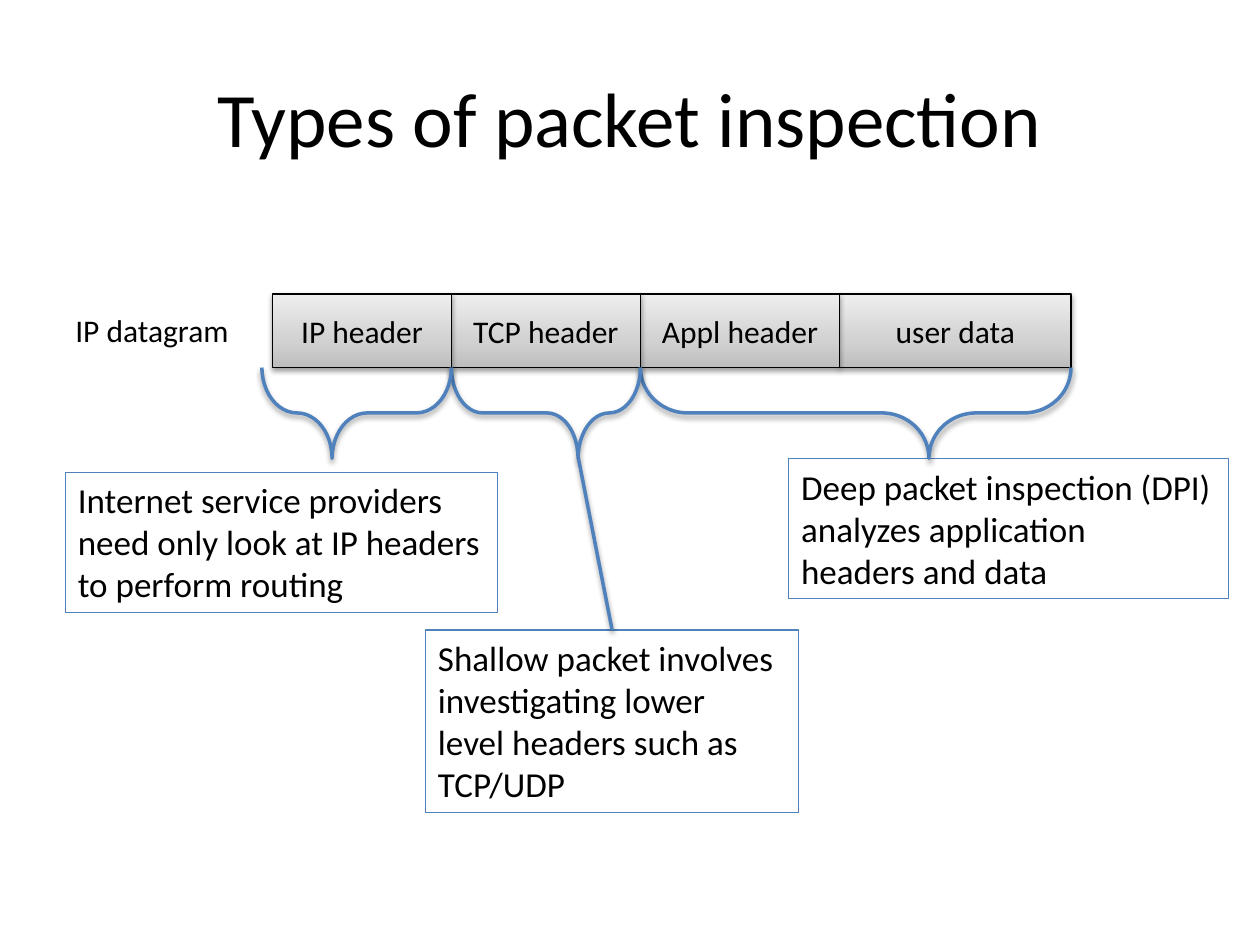
from itertools import pairwise

from lxml.etree import SubElement
from pptx import Presentation
from pptx.dml.color import RGBColor
from pptx.enum.shapes import MSO_CONNECTOR, MSO_SHAPE
from pptx.enum.text import MSO_ANCHOR, MSO_AUTO_SIZE, PP_ALIGN
from pptx.oxml.ns import qn
from pptx.util import Cm, Pt

COLORS = {
    "text": "000000",
    "field_line": "000000",
    "accent": "4F81BD",
    "shadow": "000000",
    "field_bottom": "BDBDBD",
    "field_middle": "D1D1D1",
    "field_top": "EEEEEE",
}
FIELD_STOPS = {0: "field_bottom", 35: "field_middle", 100: "field_top"}
FIELDS = ["IP header", "TCP header", "Appl header", "user data"]
FIELD_EDGES = [5.5, 9.1, 12.91, 16.93, 21.59]
FIELD_TOP, FIELD_HEIGHT = 5.93, 1.48
BRACE_TOP, BRACE_HEIGHT = 7.41, 1.83
BRACES = [(12.91, 21.59, 0.33), (9.1, 12.91, 0.33), (5.28, 9.1, 0.63)]
NOTES = [
    ((1.32, 9.53, 8.71, 2.82),
     ["Internet service providers", "need only look at IP headers", "to perform routing"]),
    ((8.58, 12.7, 7.52, 3.68),
     ["Shallow packet involves", "investigating lower", "level headers such as", "TCP/UDP"]),
    ((15.9, 9.25, 8.86, 2.82),
     ["Deep packet inspection (DPI)", "analyzes application", "headers and data"]),
]
CENTERED = {"word_wrap": True, "vertical_anchor": MSO_ANCHOR.MIDDLE}
FITTED = {
    "word_wrap": False,
    "vertical_anchor": MSO_ANCHOR.TOP,
    "auto_size": MSO_AUTO_SIZE.SHAPE_TO_FIT_TEXT,
}


def color(name):
    """Return the named colour."""
    return RGBColor.from_string(COLORS[name])


def apply_format(target, values):
    """Set each attribute in a dict of format values."""
    for name, value in values.items():
        setattr(target, name, value)


def write_text(shape, lines, size, frame_format, alignment=PP_ALIGN.LEFT):
    """Write one paragraph per line into a shape."""
    frame = shape.text_frame
    frame.text = "\n".join(lines)
    apply_format(frame, frame_format)
    for paragraph in frame.paragraphs:
        paragraph.alignment = alignment
        apply_format(paragraph.font, {"name": "Calibri", "size": Pt(size)})
        paragraph.font.color.rgb = color("text")


def set_line(shape, name, width):
    """Give a shape or connector a solid line."""
    shape.line.color.rgb = color(name)
    shape.line.width = Pt(width)


def add_color(parent, name):
    """Add a colour element to a parent element."""
    return SubElement(parent, qn("a:srgbClr"), val=COLORS[name])


def add_shadow(shape):
    """Add a soft shadow that falls downwards."""
    effects = SubElement(shape._element.spPr, qn("a:effectLst"))
    shadow = SubElement(effects, qn("a:outerShdw"), blurRad="40000", dist="20000",
                        dir="5400000", rotWithShape="0")
    SubElement(add_color(shadow, "shadow"), qn("a:alpha"), val="38000")


def fill_field(shape):
    """Fill a datagram field with a vertical grey gradient."""
    shape.fill.gradient()
    gradient = shape._element.spPr.find(qn("a:gradFill"))
    stops = gradient.find(qn("a:gsLst"))
    for stop in list(stops):
        stops.remove(stop)
    for position, name in FIELD_STOPS.items():
        add_color(SubElement(stops, qn("a:gs"), pos=str(position * 1000)), name)
    gradient.find(qn("a:lin")).set("ang", str(270 * 60000))


def add_label(slide, box, text, size, frame_format, alignment=PP_ALIGN.LEFT):
    """Add a plain text box."""
    label = slide.shapes.add_textbox(*map(Cm, box))
    write_text(label, [text], size, frame_format, alignment)


def add_field(slide, text, left, right):
    """Add one field of the datagram."""
    field = slide.shapes.add_shape(MSO_SHAPE.RECTANGLE, Cm(left), Cm(FIELD_TOP),
                                   Cm(right - left), Cm(FIELD_HEIGHT))
    fill_field(field)
    set_line(field, "field_line", 0.75)
    add_shadow(field)
    write_text(field, [text], 18, CENTERED, PP_ALIGN.CENTER)


def add_note(slide, box, lines):
    """Add an outlined explanation."""
    note = slide.shapes.add_shape(MSO_SHAPE.RECTANGLE, *map(Cm, box))
    note.fill.background()
    note.shadow.inherit = False
    set_line(note, "accent", 0.75)
    write_text(note, lines, 20, FITTED)


def add_brace(slide, left, right, tip):
    """Add a brace that opens upwards and spans left to right."""
    span = right - left
    brace = slide.shapes.add_shape(
        MSO_SHAPE.RIGHT_BRACE, Cm((left + right - BRACE_HEIGHT) / 2),
        Cm(BRACE_TOP + (BRACE_HEIGHT - span) / 2), Cm(BRACE_HEIGHT), Cm(span))
    brace.rotation = 90
    brace.adjustments[0] = 0.52
    brace.adjustments[1] = tip
    brace.fill.background()
    set_line(brace, "accent", 2)
    add_shadow(brace)


def add_pointer(slide, start, end):
    """Add a straight line from a brace to its note."""
    pointer = slide.shapes.add_connector(MSO_CONNECTOR.STRAIGHT, *map(Cm, start + end))
    set_line(pointer, "accent", 2)
    add_shadow(pointer)


def main():
    """Build the slide and save it."""
    presentation = Presentation()
    apply_format(presentation, {"slide_width": Cm(25.4), "slide_height": Cm(19.05)})
    slide = presentation.slides.add_slide(presentation.slide_layouts[6])
    add_label(slide, (1.27, 0.76, 22.86, 3.18), "Types of packet inspection", 44,
              CENTERED, PP_ALIGN.CENTER)
    for text, (left, right) in reversed(list(zip(FIELDS, pairwise(FIELD_EDGES)))):
        add_field(slide, text, left, right)
    add_label(slide, (1.27, 6.15, 3.66, 1.02), "IP datagram", 18, FITTED)
    for box, lines in NOTES:
        add_note(slide, box, lines)
    for left, right, tip in BRACES:
        add_brace(slide, left, right, tip)
    add_pointer(slide, (11.66, 9.24), (12.34, 12.7))
    presentation.save("out.pptx")


if __name__ == "__main__":
    main()
